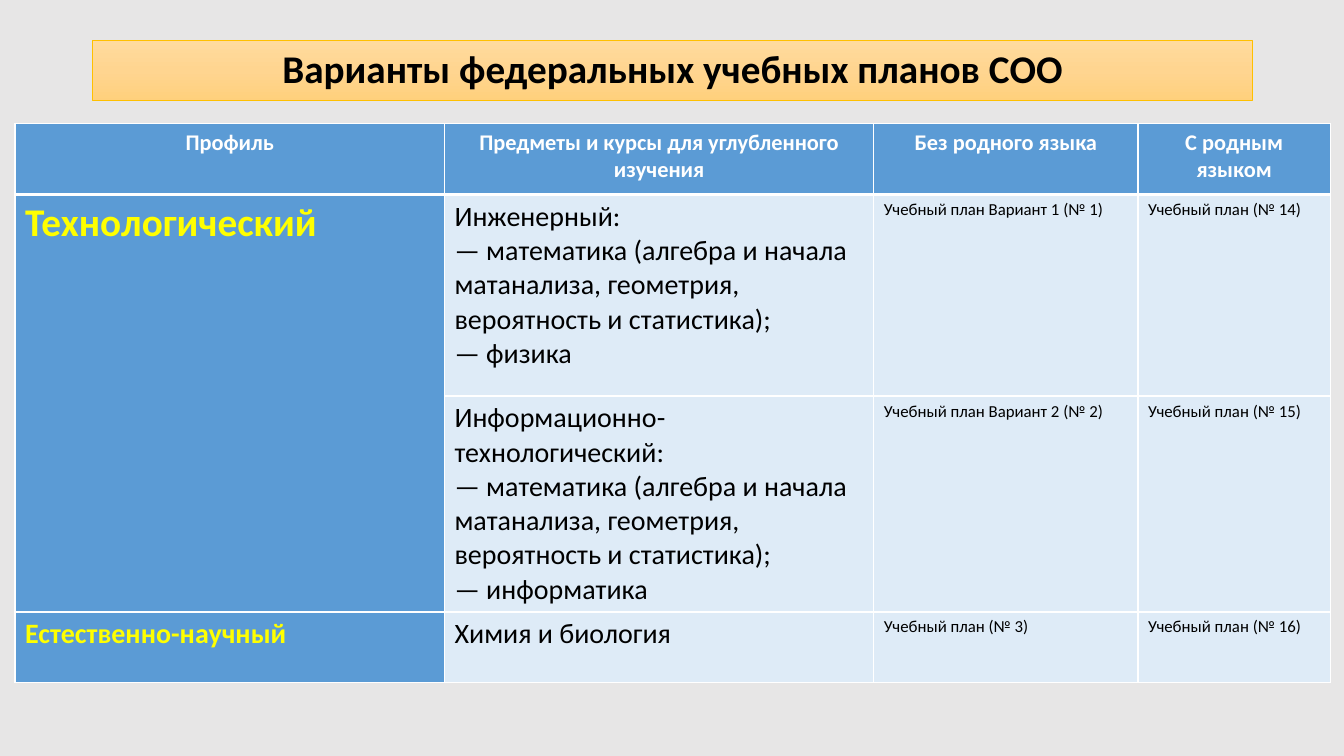
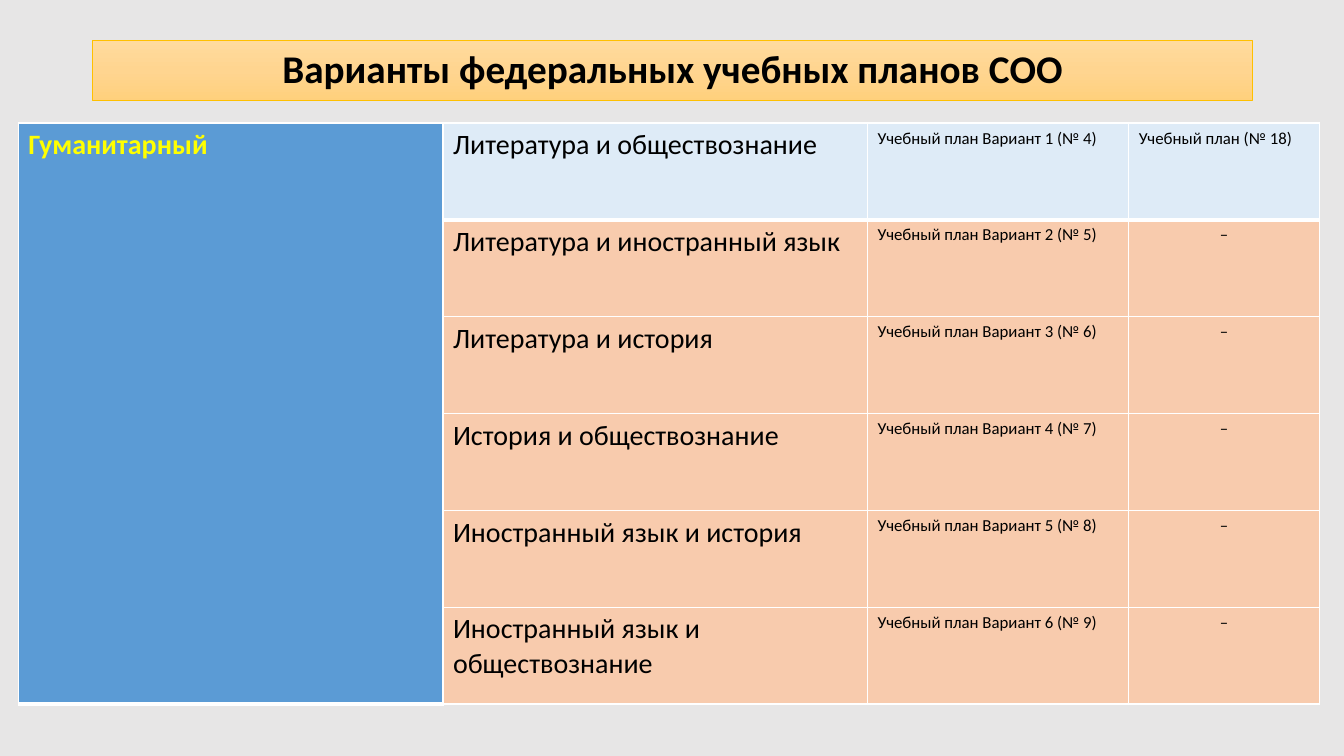
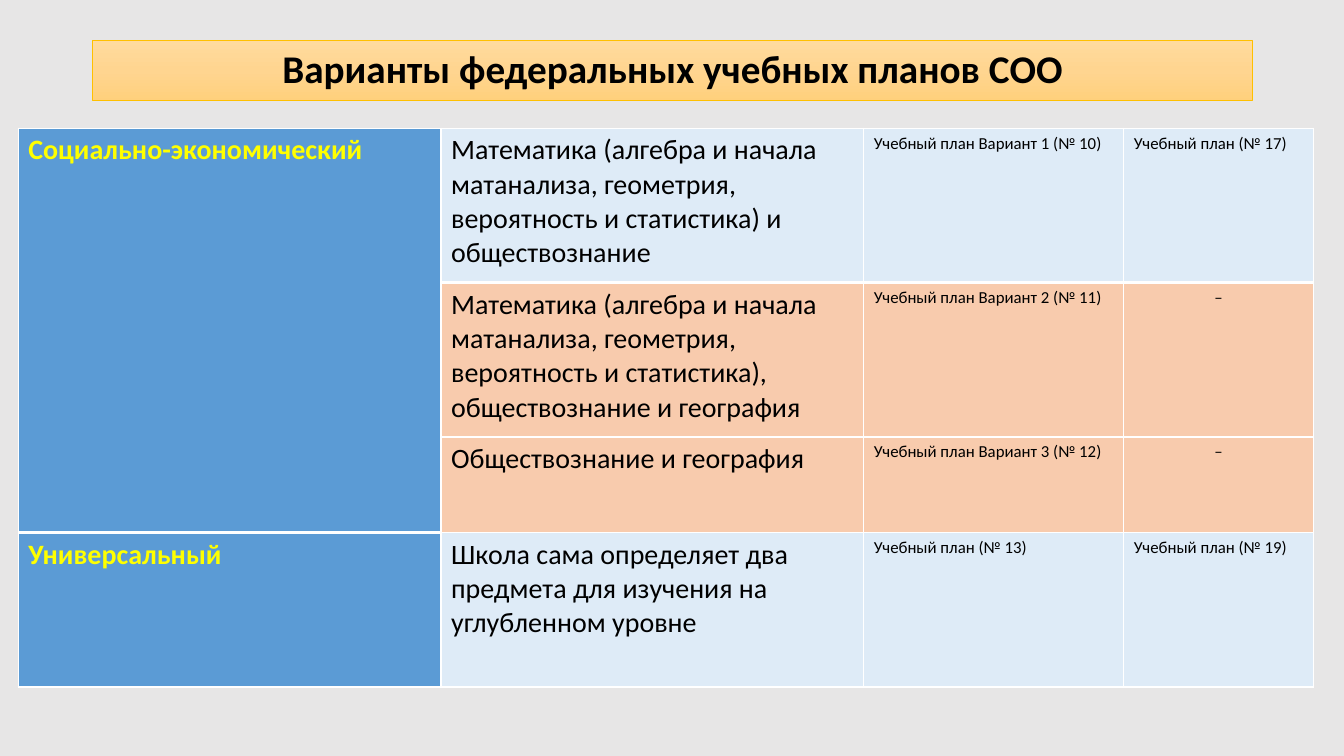
from copy import deepcopy

from lxml.etree import SubElement as Sub
from pptx import Presentation
from pptx.dml.color import RGBColor as Rgb
from pptx.enum.text import MSO_ANCHOR as Anchor, MSO_AUTO_SIZE as Auto, PP_ALIGN as Align
from pptx.oxml.ns import qn
from pptx.util import Cm, Pt

INK = {
    "page": "E7E6E6", "gold": "FFC000", "top": "FFDB9E", "mid": "FFD590",
    "low": "FFD07C", "black": "000000", "white": "FFFFFF", "yellow": "FFFF00",
    "blue": "5B9BD5", "pale": "DEEBF7", "peach": "F8CBAD",
}
FONT = "Calibri"
TITLE = "Варианты федеральных учебных планов СОО"
BAND = (2.34, 1.02, 29.21, 1.52)
PARTS = (4.26, 4.26, 2.62, 1.91)
SIZES = (20, 20, 12, 12)
DASH = "–"
HEAD = ("Профиль", "Предметы и курсы для углубленного изучения",
        "Без родного языка", "С родным языком")
MATH = "атематика (алгебра и начала матанализа, геометрия, вероятность и статистика)"

PAGES = [
    {"box": (0.38, 3.12, 33.15), "high": (1.78, 5.08, 5.44, 1.78), "lead": 28, "rows": [
        HEAD,
        ("Технологический", f"Инженерный:\n— м{MATH};\v— физика",
         "Учебный план Вариант 1 (№ 1)", "Учебный план (№ 14)"),
        ("", f"Информационно-технологический:\n— м{MATH};\v— информатика",
         "Учебный план Вариант 2 (№ 2)", "Учебный план (№ 15)"),
        ("Естественно-научный", "Химия и биология",
         "Учебный план (№ 3)", "Учебный план (№ 16)"),
    ]},
    {"box": (0.46, 3.1, 32.79), "high": (2.44,) * 6, "lead": 20, "rows": [
        ("Гуманитарный", "Литература и обществознание",
         "Учебный план Вариант 1 (№ 4)", "Учебный план (№ 18)"),
        ("", "Литература и иностранный язык", "Учебный план Вариант 2 (№ 5)", DASH),
        ("", "Литература и история", "Учебный план Вариант 3 (№ 6)", DASH),
        ("", "История и обществознание", "Учебный план Вариант 4 (№ 7)", DASH),
        ("", "Иностранный язык и история", "Учебный план Вариант 5 (№ 8)", DASH),
        ("", "Иностранный язык и обществознание", "Учебный план Вариант 6 (№ 9)", DASH),
    ]},
    {"box": (0.46, 3.23, 32.64), "high": (3.89, 3.89, 2.41, 3.89), "lead": 20, "rows": [
        ("Социально-экономический", f"М{MATH} и обществознание",
         "Учебный план Вариант 1 (№ 10)", "Учебный план (№ 17)"),
        ("", f"М{MATH}, обществознание и география",
         "Учебный план Вариант 2 (№ 11)", DASH),
        ("", "Обществознание и география", "Учебный план Вариант 3 (№ 12)", DASH),
        ("Универсальный", "Школа сама определяет два предмета для изучения на углубленном уровне",
         "Учебный план (№ 13)", "Учебный план (№ 19)"),
    ]},
]


def tint(name):
    """Return the named colour."""
    return Rgb.from_string(INK[name])


def style(frame, size, ink, bold, align):
    """Format every paragraph and run of a text frame."""
    for para in frame.paragraphs:
        para.alignment = align
        for run in para.runs:
            font = run.font
            font.name, font.size, font.bold = FONT, Pt(size), bold
            font.color.rgb = tint(ink)


def band(slide, box):
    """Place the title on its gold band."""
    title = slide.shapes.title
    title.left, title.top, title.width, title.height = map(Cm, box)
    fill = title.fill
    fill.gradient()
    fill.gradient_angle = 270
    stops = title.element.spPr.find(".//" + qn("a:gsLst"))
    stops.insert(1, deepcopy(stops[0]))
    for stop, ink, pos in zip(fill.gradient_stops, ("top", "mid", "low"), (0, 0.5, 1)):
        stop.color.rgb = tint(ink)
        stop.position = pos
    title.line.color.rgb = tint("gold")
    title.line.width = Pt(0.5)
    title.shadow.inherit = False
    frame = title.text_frame
    frame.text = TITLE
    frame.auto_size = Auto.NONE
    frame.word_wrap = True
    frame.vertical_anchor = Anchor.MIDDLE
    frame.paragraphs[0].line_spacing = 0.9
    style(frame, 28, "black", True, Align.CENTER)


def edge(cell, top, low):
    """Draw white cell borders with the given top and bottom widths."""
    props = cell._tc.get_or_add_tcPr()
    for side, wide in (("L", 1), ("R", 1), ("T", top), ("B", low)):
        line = Sub(props, qn("a:ln" + side), w=str(Pt(wide)))
        Sub(Sub(line, qn("a:solidFill")), qn("a:srgbClr"), val=INK["white"])


def look(row, col, lead):
    """Return the fill, size, ink, weight and alignment of a cell."""
    if row is HEAD:
        return "blue", 16, "white", True, Align.CENTER
    if col == 0:
        size = lead if row[0] == "Технологический" else SIZES[0]
        return "blue", size, "yellow", True, Align.LEFT
    fill = "peach" if row[3] == DASH else "pale"
    align = Align.CENTER if row[col] == DASH else Align.LEFT
    return fill, SIZES[col], "black", False, align


def grid(slide, box, high, lead, rows):
    """Place the table of plans, merging each profile over its rows."""
    left, top, wide = box
    table = slide.shapes.add_table(
        len(rows), len(PARTS), Cm(left), Cm(top), Cm(wide), Cm(sum(high))).table
    table.first_row = table.horz_banding = False
    for col, part in zip(table.columns, PARTS):
        col.width = Cm(wide * part / sum(PARTS))
    for line, tall in zip(table.rows, high):
        line.height = Cm(tall)
    start = 0
    for r, row in enumerate(rows):
        above, start = start, (r if row[0] else start)
        for c, text in enumerate(row):
            cell = table.cell(r, c)
            first = r if c else start
            prior = r - 1 if c else above
            edge(cell, 3 if r and prior == 0 else 1, 3 if first == 0 else 1)
            fill, *form = look(row, c, lead)
            cell.fill.solid()
            cell.fill.fore_color.rgb = tint(fill)
            cell.text_frame.text = text
            style(cell.text_frame, *form)
        if r == len(rows) - 1 or rows[r + 1][0]:
            if start < r:
                table.cell(start, 0).merge(table.cell(r, 0))


def main():
    """Build and save the deck."""
    deck = Presentation()
    deck.slide_width, deck.slide_height = Cm(33.87), Cm(19.05)
    back = deck.slide_master.background.fill
    back.solid()
    back.fore_color.rgb = tint("page")
    for page in PAGES:
        slide = deck.slides.add_slide(deck.slide_layouts[5])
        band(slide, BAND)
        grid(slide, **page)
    deck.save("out.pptx")


if __name__ == "__main__":
    main()
